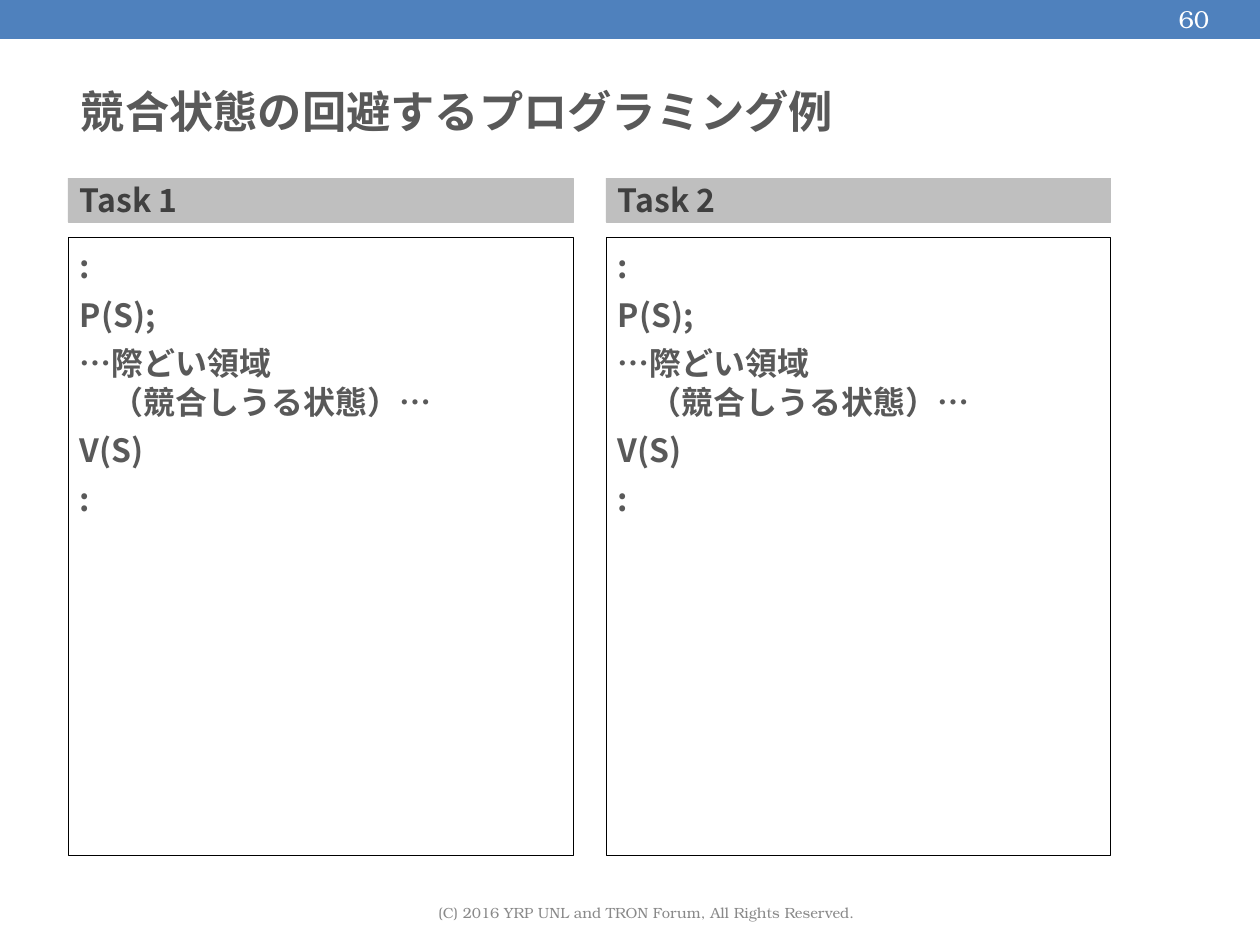
from dataclasses import dataclass

from lxml.etree import SubElement
from pptx import Presentation
from pptx.dml.color import RGBColor
from pptx.enum.shapes import MSO_SHAPE as Shape
from pptx.enum.text import MSO_ANCHOR as Anchor, PP_ALIGN as Align
from pptx.oxml.ns import qn
from pptx.util import Emu, Pt

SCALE = 10332  # EMU in one px
SANS, SERIF = "Noto Sans CJK JP", "TeX Gyre Bonum"
HEX = {
    "blue": "4F81BD", "silver": "BFBFBF", "black": "000000", "white": "FFFFFF",
    "text": "595959", "dark": "404040", "gray": "898989",
}
CODE = (":", "P(S);", "…際どい領域\n（競合しうる状態）…", "V(S)", ":")


@dataclass(frozen=True)
class Style:
    font: str
    size: int
    color: str
    bold: bool = False
    align: Align = Align.LEFT
    hang: int = 0
    before: float = 0
    pitch: int = 0


@dataclass(frozen=True)
class Box:
    x: int
    y: int
    w: int
    h: int
    lines: tuple[str, ...] = ()
    style: Style | None = None
    fill: str = ""
    edge: str = ""
    weight: float = 0.75
    anchor: Anchor = Anchor.MIDDLE
    side: int = 12
    top: int = 6


TITLE = Style(SANS, 36, "text", True)
HEAD = Style(SANS, 26, "dark", True)
BODY = Style(SANS, 26, "text", True, hang=32, before=8.5, pitch=31)
PAGE = Style(SERIF, 20, "white", align=Align.RIGHT)
FOOT = Style(SERIF, 12, "gray", align=Align.CENTER)


def px(value: int) -> Emu:
    return Emu(value * SCALE)


def rgb(name: str) -> RGBColor:
    return RGBColor.from_string(HEX[name])


def add_run(para, text: str, style: Style) -> None:
    run = para.add_run()
    run.text = text
    font = run.font
    font.name, font.size, font.bold = style.font, Pt(style.size), style.bold
    font.color.rgb = rgb(style.color)
    SubElement(font._element, qn("a:ea"), typeface=style.font)


def write(frame, box: Box) -> None:
    style = box.style
    frame.word_wrap = True
    frame.vertical_anchor = box.anchor
    frame.margin_left = frame.margin_right = px(box.side)
    frame.margin_top = frame.margin_bottom = px(box.top)
    for row, line in enumerate(box.lines):
        para = frame.add_paragraph() if row else frame.paragraphs[0]
        para.alignment = style.align
        if style.hang:
            props = para._p.get_or_add_pPr()
            props.set("marL", str(px(style.hang)))
            props.set("indent", str(-px(style.hang)))
        if style.pitch:
            para.line_spacing = Pt(style.pitch)
        if row:
            para.space_before = Pt(style.before)
        for part, text in enumerate(line.split("\n")):
            if part:
                para.add_line_break()
            add_run(para, text, style)


def draw(slide, box: Box) -> None:
    place = px(box.x), px(box.y), px(box.w), px(box.h)
    if box.edge:
        shape = slide.shapes.add_shape(Shape.RECTANGLE, *place)
        shape.shadow.inherit = False
        if box.fill:
            shape.fill.solid()
            shape.fill.fore_color.rgb = rgb(box.fill)
        else:
            shape.fill.background()
        shape.line.color.rgb = rgb(box.edge)
        shape.line.width = Pt(box.weight)
    else:
        shape = slide.shapes.add_textbox(*place)
    if box.lines:
        write(shape.text_frame, box)


def task(num: int) -> list[Box]:
    """Give the header and the code panel of one task column."""
    left = 68 + (num - 1) * 538
    return [
        Box(left, 178, 505, 44, (f"Task {num}",), HEAD, "silver", "silver", top=0),
        Box(left, 237, 505, 619, CODE, BODY, edge="black", anchor=Anchor.TOP, top=10),
    ]


def main() -> None:
    deck = Presentation()
    deck.slide_width, deck.slide_height = px(1260), px(945)
    slide = deck.slides.add_slide(deck.slide_layouts[6])
    boxes = [
        Box(0, 0, 1260, 38, fill="blue", edge="blue", weight=2),
        Box(1145, 0, 76, 38, ("60",), PAGE),
        Box(69, 66, 1042, 90, ("競合状態の回避するプログラミング例",), TITLE),
        *task(1),
        *task(2),
        Box(70, 896, 1153, 34,
            ("(C) 2016 YRP UNL and TRON Forum, All Rights Reserved.",), FOOT, side=9, top=4),
    ]
    for box in boxes:
        draw(slide, box)
    deck.save("out.pptx")


if __name__ == "__main__":
    main()
